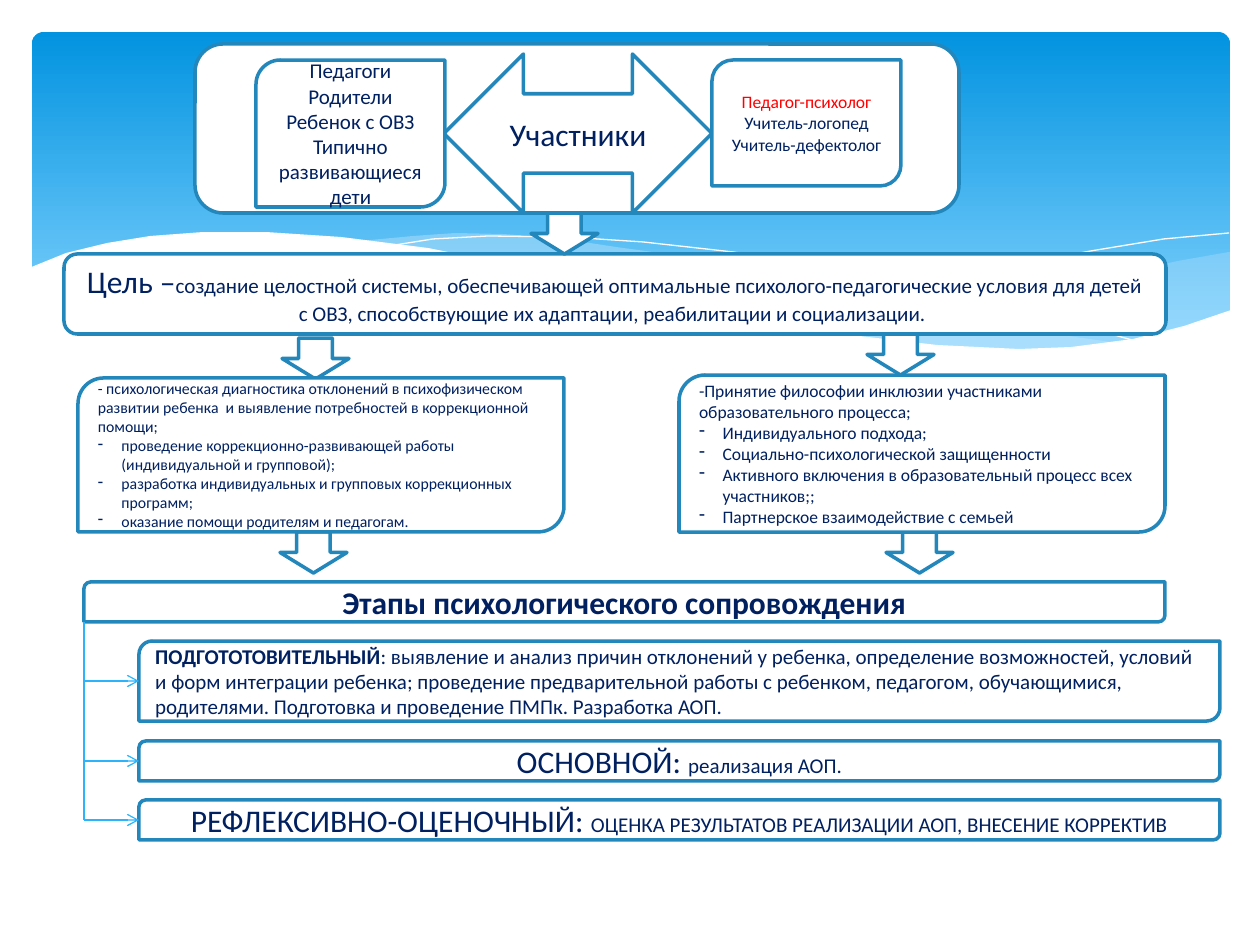
"""Build the slide that shows how psychological support is organised."""
import dataclasses

import pptx
import pptx.dml.color
import pptx.enum.shapes
import pptx.enum.text
import pptx.oxml.ns
import pptx.util
from lxml import etree

SHAPE = pptx.enum.shapes.MSO_SHAPE
ALIGN = pptx.enum.text.PP_ALIGN
EMU_PER_PX = 914400 / 126


def px(length):
    return pptx.util.Emu(round(length * EMU_PER_PX))


def rgb(value):
    return pptx.dml.color.RGBColor.from_string(value)


def child(parent, tag, **attributes):
    return etree.SubElement(parent, pptx.oxml.ns.qn(tag), **attributes)


@dataclasses.dataclass(frozen=True)
class Theme:
    font: str = "Calibri"
    white: str = "FFFFFF"
    ink: str = "002060"
    accent: str = "FF0000"
    border: str = "2487BB"
    branch: str = "2BB4FC"
    wave: str = "C6E7FC"
    sky_top: str = "0293E0"
    sky_bottom: str = "83D3FE"
    heading: int = 18
    body: int = 12
    small: int = 10
    tiny: int = 9
    border_width: float = 2
    branch_width: float = 0.75


@dataclasses.dataclass(frozen=True)
class Span:
    text: str
    size: int
    bold: bool = False
    color: str = Theme.ink


class Painter:
    def __init__(self, slide, theme):
        self.slide = slide
        self.theme = theme

    def sky(self, left, top, width, height):
        panel = self.slide.shapes.add_shape(
            SHAPE.ROUNDED_RECTANGLE, px(left), px(top), px(width), px(height))
        panel.adjustments[0] = 0.034
        panel.shadow.inherit = False
        panel.line.fill.background()
        panel.fill.gradient()
        panel.fill.gradient_angle = 270
        start, end = panel.fill.gradient_stops
        start.color.rgb, start.position = rgb(self.theme.sky_top), 0
        end.color.rgb, end.position = rgb(self.theme.sky_bottom), 0.9

    def curve(self, points, closed):
        builder = self.slide.shapes.build_freeform(*points[0], scale=EMU_PER_PX)
        builder.add_line_segments(points[1:], close=closed)
        outline = builder.convert_to_shape()
        outline.shadow.inherit = False
        return outline

    def wave(self, points, color, opacity=100):
        area = self.curve(points, True)
        area.line.fill.background()
        area.fill.solid()
        area.fill.fore_color.rgb = rgb(color)
        if opacity < 100:
            tint = area.fill._xPr.find(".//" + pptx.oxml.ns.qn("a:srgbClr"))
            child(tint, "a:alpha", val=str(opacity * 1000))

    def crest(self, points):
        ridge = self.curve(points, False)
        ridge.fill.background()
        ridge.line.color.rgb = rgb(self.theme.white)
        ridge.line.width = pptx.util.Pt(0)

    def box(self, kind, left, top, width, height, paragraphs=(),
            align=ALIGN.CENTER, bullets_from=None):
        box = self.slide.shapes.add_shape(
            kind, px(left), px(top), px(width), px(height))
        box.shadow.inherit = False
        box.fill.solid()
        box.fill.fore_color.rgb = rgb(self.theme.white)
        box.line.color.rgb = rgb(self.theme.border)
        box.line.width = pptx.util.Pt(self.theme.border_width)
        frame = box.text_frame
        frame.word_wrap = True
        frame.vertical_anchor = pptx.enum.text.MSO_ANCHOR.MIDDLE
        for index, spans in enumerate(paragraphs):
            para = frame.add_paragraph() if index else frame.paragraphs[0]
            para.alignment = align
            if bullets_from is not None and index >= bullets_from:
                self.bullet(para)
            for span in spans:
                self.run(para, span)

    def bullet(self, para):
        properties = para._p.get_or_add_pPr()
        properties.set("marL", "171450")
        properties.set("indent", "-171450")
        child(properties, "a:buChar", char="-")

    def run(self, para, span):
        run = para.add_run()
        run.text = span.text
        run.font.name = self.theme.font
        run.font.size = pptx.util.Pt(span.size)
        run.font.bold = span.bold
        run.font.color.rgb = rgb(span.color)

    def branch(self, start, end, arrow=True):
        line = self.slide.shapes.add_connector(
            pptx.enum.shapes.MSO_CONNECTOR.STRAIGHT, *map(px, start + end))
        line.line.color.rgb = rgb(self.theme.branch)
        line.line.width = pptx.util.Pt(self.theme.branch_width)
        if arrow:
            child(line.line._get_or_add_ln(), "a:tailEnd", type="arrow")
        child(line._element.spPr, "a:effectLst")


def lines(size, *texts):
    return [[Span(text, size)] for text in texts]


def paint_background(painter, theme):
    painter.sky(32, 32, 1198, 340)
    painter.wave([
        (1229, 252), (1178, 261), (1085, 281), (982, 305), (919, 319), (833, 334),
        (888, 341), (939, 346), (1012, 350), (1076, 348), (1130, 340), (1178, 330),
        (1230, 311), (1230, 252)], theme.wave, 29)
    painter.wave([
        (1125, 344), (1055, 334), (976, 320), (890, 302), (793, 280), (736, 266),
        (682, 256), (616, 247), (557, 238), (503, 234), (455, 233), (413, 236),
        (360, 241), (431, 251), (509, 266), (566, 280), (668, 302), (757, 321),
        (838, 335), (910, 345), (989, 350), (1056, 350)], theme.wave, 40)
    painter.crest([
        (389, 246), (433, 239), (488, 236), (567, 237), (643, 242), (733, 252),
        (838, 268), (916, 285), (1002, 304), (1143, 343)])
    painter.crest([
        (772, 324), (876, 296), (942, 281), (1016, 265), (1091, 251), (1164, 239),
        (1229, 233)])
    painter.wave([
        (1231, 310), (1184, 326), (1133, 339), (1071, 347), (1019, 349), (937, 345),
        (842, 334), (760, 320), (667, 301), (563, 277), (493, 261), (428, 248),
        (341, 237), (266, 232), (203, 232), (150, 236), (107, 243), (66, 253),
        (29, 268), (29, 415), (1231, 415)], theme.white)


def paint_participants(painter, theme):
    painter.box(SHAPE.FLOWCHART_ALTERNATE_PROCESS, 195, 44, 764, 169)
    painter.box(SHAPE.LEFT_RIGHT_ARROW, 444, 54, 268, 159,
                lines(theme.heading, "Участники"))
    painter.box(SHAPE.ROUND_2_DIAG_RECTANGLE, 256, 60, 189, 147, lines(
        theme.body, "Педагоги", "Родители", "Ребенок с ОВЗ",
        "Типично развивающиеся дети"))
    painter.box(SHAPE.ROUND_2_DIAG_RECTANGLE, 712, 60, 189, 126, [
        [Span("Педагог-психолог", theme.small, color=theme.accent)],
        *lines(theme.small, "Учитель-логопед", "Учитель-дефектолог")])


def paint_goal_and_tasks(painter, theme):
    painter.box(SHAPE.ROUNDED_RECTANGLE, 64, 254, 1102, 80, [[
        Span("Цель –", theme.heading),
        Span("создание целостной системы, обеспечивающей оптимальные психолого-педагогические условия "
             "для детей с ОВЗ, способствующие их адаптации, реабилитации и социализации. ", theme.body)]])
    for left, top in ((531, 213), (867, 334), (282, 338), (280, 532), (886, 532)):
        painter.box(SHAPE.DOWN_ARROW, left, top, 67, 41)
    principles = lines(
        theme.small,
        "-Принятие философии инклюзии участниками образовательного процесса;",
        "Индивидуального подхода;", "Социально-психологической защищенности",
        "Активного включения в образовательный процесс всех участников;;",
        "Партнерское взаимодействие с семьей")
    tasks = lines(
        theme.tiny,
        "- психологическая диагностика отклонений в психофизическом развитии ребенка  "
        "и выявление потребностей в коррекционной помощи;",
        "проведение коррекционно-развивающей работы (индивидуальной и групповой);",
        "разработка индивидуальных и групповых коррекционных программ;",
        "оказание помощи родителям и педагогам.")
    for left, top, height, texts in ((679, 375, 157, principles), (78, 378, 154, tasks)):
        painter.box(SHAPE.ROUND_2_DIAG_RECTANGLE, left, top, 486, height, texts,
                    ALIGN.LEFT, bullets_from=1)


def paint_stages(painter, theme):
    painter.box(SHAPE.ROUND_2_DIAG_RECTANGLE, 84, 582, 1081, 40, [
        [Span("Этапы психологического сопровождения", theme.heading, True)]])
    stages = (
        (641, 80, ALIGN.LEFT, Span("ПОДГОТОТОВИТЕЛЬНЫЙ", theme.body, True),
         ": выявление и анализ причин отклонений у ребенка, определение возможностей, условий и форм "
         "интеграции ребенка; проведение предварительной работы с ребенком, педагогом, обучающимися, "
         "родителями. Подготовка и проведение ПМПк. Разработка АОП."),
        (741, 40, ALIGN.CENTER, Span("ОСНОВНОЙ: ", theme.heading), "реализация АОП."),
        (800, 40, ALIGN.CENTER, Span("РЕФЛЕКСИВНО-ОЦЕНОЧНЫЙ: ", theme.heading),
         "ОЦЕНКА РЕЗУЛЬТАТОВ РЕАЛИЗАЦИИ АОП, ВНЕСЕНИЕ КОРРЕКТИВ"))
    painter.branch((84, 622), (84, 820), arrow=False)
    for top, height, align, name, detail in stages:
        painter.box(SHAPE.ROUND_2_DIAG_RECTANGLE, 139, top, 1081, height,
                    [[name, Span(detail, theme.body)]], align)
        middle = top + height // 2
        painter.branch((84, middle), (139, middle))


def main():
    deck = pptx.Presentation()
    deck.slide_width, deck.slide_height = px(1260), px(945)
    page = deck.slides.add_slide(deck.slide_layouts[6])
    theme = Theme()
    painter = Painter(page, theme)
    for paint in (paint_background, paint_participants, paint_goal_and_tasks, paint_stages):
        paint(painter, theme)
    deck.save("out.pptx")


if __name__ == "__main__":
    main()
